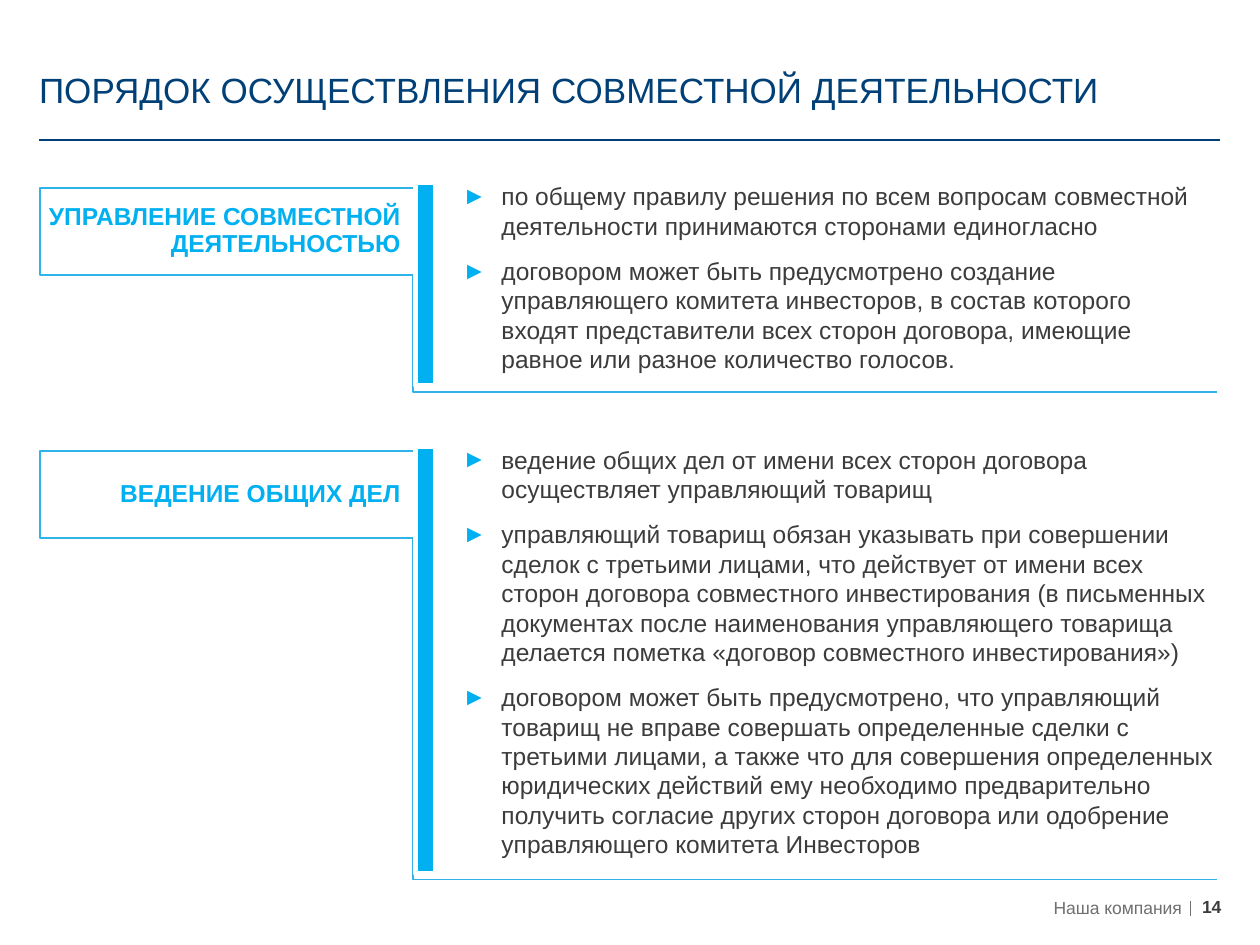
from dataclasses import dataclass

from lxml import etree
from pptx import Presentation
from pptx.dml.color import RGBColor
from pptx.enum.shapes import MSO_CONNECTOR, MSO_SHAPE
from pptx.enum.text import MSO_ANCHOR, MSO_AUTO_SIZE, PP_ALIGN
from pptx.oxml.ns import qn
from pptx.util import Inches, Pt

LEFT, RIGHT = PP_ALIGN.LEFT, PP_ALIGN.RIGHT
TOP, MIDDLE, BOTTOM = MSO_ANCHOR.TOP, MSO_ANCHOR.MIDDLE, MSO_ANCHOR.BOTTOM
RECTANGLE, STRAIGHT = MSO_SHAPE.RECTANGLE, MSO_CONNECTOR.STRAIGHT
NO_AUTOFIT = MSO_AUTO_SIZE.NONE

FONT = "Arial"
COLORS = {
    "navy": "004077",
    "accent": "00B0F0",
    "outline": "2FB4E9",
    "text": "3C3C3C",
    "muted": "706F6F",
    "white": "FFFFFF",
}


@dataclass
class Section:
    heading: str
    points: list[str]
    top: float  # top of the accent bar
    bar_height: float
    list_width: float
    list_height: float


SECTIONS = [
    Section(
        "УПРАВЛЕНИЕ СОВМЕСТНОЙ ДЕЯТЕЛЬНОСТЬЮ",
        [
            "по общему правилу решения по всем вопросам совместной деятельности "
            "принимаются сторонами единогласно",
            "договором может быть предусмотрено создание управляющего комитета "
            "инвесторов, в состав которого входят представители всех сторон "
            "договора, имеющие равное или разное количество голосов.",
        ],
        top=1.45, bar_height=1.61, list_width=6.04, list_height=1.68,
    ),
    Section(
        "ВЕДЕНИЕ ОБЩИХ ДЕЛ",
        [
            "ведение общих дел от имени всех сторон договора осуществляет "
            "управляющий товарищ",
            "управляющий товарищ обязан указывать при совершении сделок с "
            "третьими лицами, что действует от имени всех сторон договора "
            "совместного инвестирования (в письменных документах после "
            "наименования управляющего товарища делается пометка «договор "
            "совместного инвестирования»)",
            "договором может быть предусмотрено, что управляющий товарищ не "
            "вправе совершать определенные сделки с третьими лицами, а также "
            "что для совершения определенных юридических действий ему "
            "необходимо предварительно получить согласие других сторон "
            "договора или одобрение управляющего комитета Инвесторов",
        ],
        top=3.54, bar_height=3.39, list_width=6.2, list_height=3.5,
    ),
]


def rgb(name: str) -> RGBColor:
    return RGBColor.from_string(COLORS[name])


def place(shape, left: float, top: float, width: float, height: float) -> None:
    shape.left, shape.top = Inches(left), Inches(top)
    shape.width, shape.height = Inches(width), Inches(height)


def set_frame(frame, anchor, margins=(0, 0, 0, 0)) -> None:
    frame.word_wrap = True
    frame.auto_size = NO_AUTOFIT
    frame.vertical_anchor = anchor
    (frame.margin_left, frame.margin_top,
     frame.margin_right, frame.margin_bottom) = map(Inches, margins)


def write(paragraph, text: str, size: float, color: str,
          align=LEFT, bold: bool = False) -> None:
    paragraph.alignment = align
    run = paragraph.add_run()
    run.text = text
    run.font.name, run.font.size, run.font.bold = FONT, Pt(size), bold
    run.font.color.rgb = rgb(color)


def add_rule(slide, start: tuple, end: tuple, color: str, weight: float) -> None:
    rule = slide.shapes.add_connector(STRAIGHT, *map(Inches, start + end))
    rule.line.color.rgb = rgb(color)
    rule.line.width = Pt(weight)
    etree.SubElement(rule._element.spPr, qn("a:effectLst"))


def add_box(slide, bounds: tuple, fill: str, line: str, weight: float):
    box = slide.shapes.add_shape(RECTANGLE, *map(Inches, bounds))
    box.shadow.inherit = False
    box.fill.solid()
    box.fill.fore_color.rgb = rgb(fill)
    box.line.color.rgb = rgb(line)
    box.line.width = Pt(weight)
    return box


def add_note(slide, bounds: tuple, text: str, color: str, anchor,
             align=LEFT, bold: bool = False) -> None:
    note = slide.shapes.add_textbox(*map(Inches, bounds))
    set_frame(note.text_frame, anchor)
    write(note.text_frame.paragraphs[0], text, 10, color, align, bold)


def add_bullet(paragraph) -> None:
    properties = paragraph._p.get_or_add_pPr()
    properties.set("marL", str(Inches(0.31)))
    properties.set("indent", str(-Inches(0.31)))
    bullet_color = etree.SubElement(properties, qn("a:buClr"))
    etree.SubElement(bullet_color, qn("a:srgbClr"), val=COLORS["accent"])
    etree.SubElement(properties, qn("a:buChar"), char="►")


def fill_points(body, section: Section) -> None:
    place(body, 3.57, section.top - 0.06, section.list_width, section.list_height)
    set_frame(body.text_frame, TOP, (0.1, 0.05, 0.1, 0.05))
    for index, point in enumerate(section.points):
        paragraph = (body.text_frame.add_paragraph() if index
                     else body.text_frame.paragraphs[0])
        paragraph.space_before = Pt(9 if index else 0)
        add_bullet(paragraph)
        write(paragraph, point, 14, "text")


def add_section_frame(slide, section: Section) -> None:
    # Heading box
    label_top, label_height = section.top + 0.04, 0.69
    label = add_box(slide, (0.32, label_top, 3.14, label_height),
                    "white", "outline", 1)
    set_frame(label.text_frame, MIDDLE, (0, 0.05, 0.28, 0.05))
    heading = label.text_frame.paragraphs[0]
    heading.line_spacing = 0.9
    write(heading, section.heading, 14, "accent", RIGHT, bold=True)

    # Angled line under the list
    bottom = section.top + section.bar_height + 0.05
    corner = [(3.28, bottom), (3.28, label_top + label_height)]
    builder = slide.shapes.build_freeform(Inches(9.66), Inches(bottom))
    builder.add_line_segments([(Inches(x), Inches(y)) for x, y in corner],
                              close=False)
    angle = builder.convert_to_shape()
    angle.shadow.inherit = False
    angle.fill.background()
    angle.line.color.rgb = rgb("outline")
    angle.line.width = Pt(1)

    # Accent bar
    add_box(slide, (3.3, section.top, 0.16, section.bar_height),
            "accent", "white", 3)


def main() -> None:
    deck = Presentation()
    deck.slide_width, deck.slide_height = Inches(10), Inches(7.5)
    slide = deck.slides.add_slide(deck.slide_layouts[3])
    title, *bodies = slide.placeholders

    # Title
    place(title, 0.31, 0.21, 9.36, 0.67)
    set_frame(title.text_frame, BOTTOM)
    write(title.text_frame.paragraphs[0],
          "ПОРЯДОК ОСУЩЕСТВЛЕНИЯ СОВМЕСТНОЙ ДЕЯТЕЛЬНОСТИ", 20, "navy")
    add_rule(slide, (0.31, 1.11), (9.68, 1.11), "navy", 1)

    # Sections
    for body, section in zip(bodies, SECTIONS):
        add_section_frame(slide, section)
        fill_points(body, section)

    # Footer
    add_note(slide, (5.94, 7.11, 3.44, 0.18), "Наша компания", "muted",
             MIDDLE, RIGHT)
    add_rule(slide, (9.45, 7.15), (9.45, 7.27), "muted", 0.75)
    add_note(slide, (9.54, 7.11, 0.24, 0.18), "14", "text", TOP, bold=True)

    deck.save("out.pptx")


if __name__ == "__main__":
    main()
